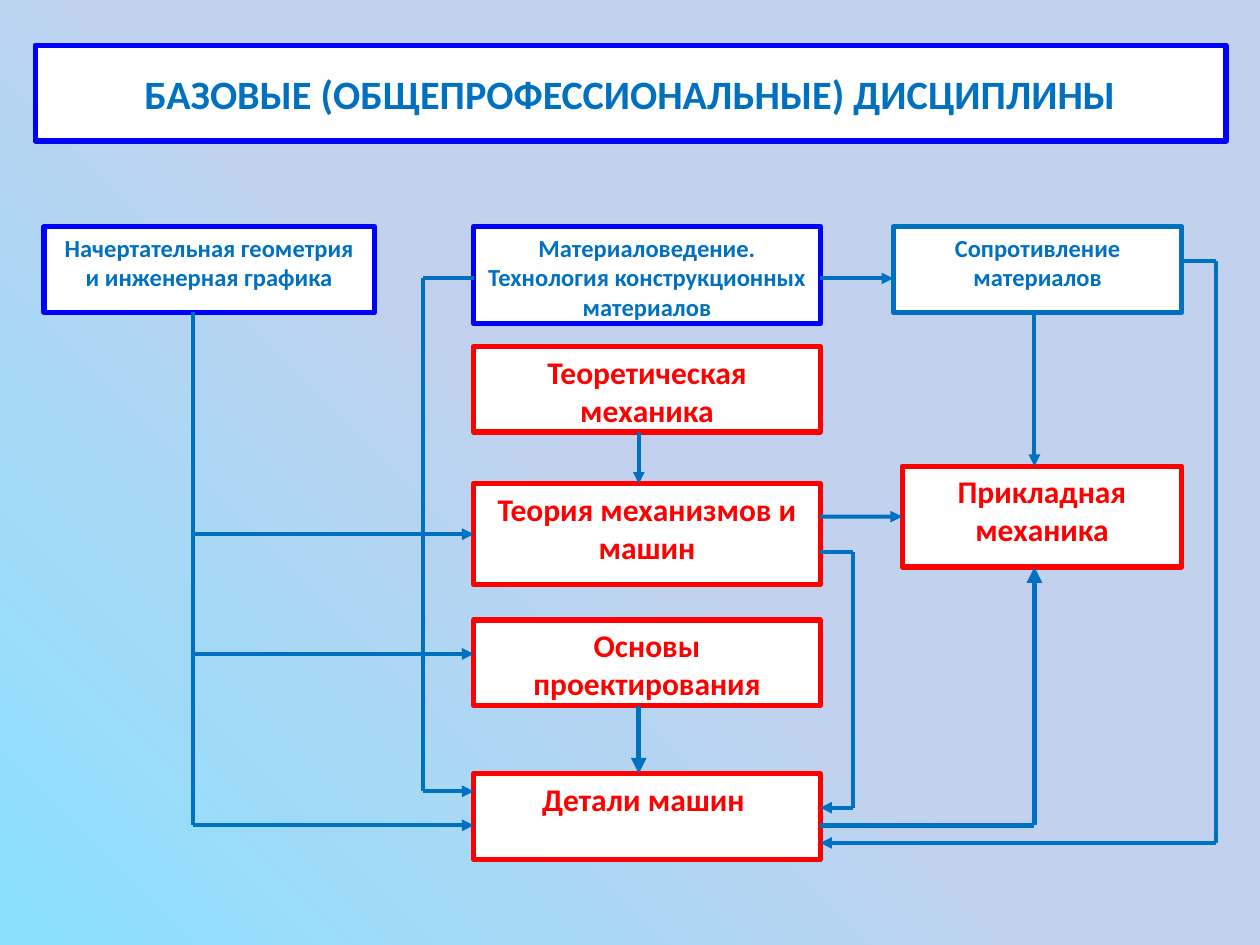
from itertools import pairwise

from lxml import etree
from pptx import Presentation
from pptx.dml.color import RGBColor
from pptx.enum import shapes, text
from pptx.oxml import ns
from pptx.util import Inches, Pt

BLUE, SKY, RED, WHITE = "0000FF", "0070C0", "FF0000", "FFFFFF"
TOP, MIDDLE = text.MSO_ANCHOR.TOP, text.MSO_ANCHOR.MIDDLE
LEFT_SIDE = 1


def color(value):
    return RGBColor.from_string(value)


def paint_background(page):
    fill = page.background.fill
    fill.gradient()
    fill.gradient_angle = 225
    for stop, (position, value) in zip(fill.gradient_stops, [(0.5, "C2D1ED"), (1, "89E0FF")]):
        stop.position = position
        stop.color.rgb = color(value)


def add_box(page, bounds, wording, border, ink, size, anchor=TOP):
    box = page.shapes.add_shape(shapes.MSO_SHAPE.RECTANGLE, *map(Inches, bounds))
    box.shadow.inherit = False
    box.fill.solid()
    box.fill.fore_color.rgb = color(WHITE)
    box.line.color.rgb = color(border)
    box.line.width = Pt(3)
    frame = box.text_frame
    frame.text = wording
    frame.word_wrap = True
    frame.vertical_anchor = anchor
    para = frame.paragraphs[0]
    para.alignment = text.PP_ALIGN.CENTER
    font = para.runs[0].font
    font.name, font.size, font.bold = "Calibri", Pt(size), True
    font.color.rgb = color(ink)
    return box


def add_route(page, points, width=2.25, arrow=True, target=None):
    for start, end in pairwise(points):
        line = page.shapes.add_connector(
            shapes.MSO_CONNECTOR.STRAIGHT, *map(Inches, start + end))
        line.line.color.rgb = color(SKY)
        line.line.width = Pt(width)
        properties = line._element.spPr
        etree.SubElement(properties, ns.qn("a:effectLst"))
        if arrow and end == points[-1]:
            etree.SubElement(line.line._get_or_add_ln(), ns.qn("a:tailEnd"), type="triangle")
            if target is not None:
                line.end_connect(target, LEFT_SIDE)


def add_disciplines(page, left, top):
    right = left + 6.62
    center, center_width = left + 3.41, 2.75
    add_box(page, (left, top, 2.62, 0.68),
            "Начертательная геометрия и инженерная графика", BLUE, SKY, 14)
    add_box(page, (center, top, center_width, 0.77),
            "Материаловедение. Технология конструкционных материалов", BLUE, SKY, 14)
    add_box(page, (right + 0.12, top, 2.29, 0.68),
            "Сопротивление материалов", SKY, SKY, 14)

    column = [
        (0.95, 0.68, "Теоретическая механика"),
        (2.04, 0.8, "Теория механизмов и машин"),
        (3.12, 0.68, "Основы проектирования"),
        (4.34, 0.68, "Детали машин "),
    ]
    _, mechanisms, _, _ = [
        add_box(page, (center, top + offset, center_width, height), wording, RED, RED, 18)
        for offset, height, wording in column]
    applied = add_box(page, (right + 0.19, top + 1.9, 2.22, 0.8),
                      "Прикладная механика", RED, RED, 18)
    return mechanisms, applied


def add_links(page, mechanisms, applied):
    trunk, center_left, center_right = 1.53, 3.76, 6.51
    add_route(page, [(trunk, 2.48), (trunk, 6.55), (center_left, 6.55)])
    add_route(page, [(trunk, 4.24), (center_left, 4.24)], target=mechanisms)
    add_route(page, [(trunk, 5.19), (center_left, 5.19)])
    add_route(page, [(center_left, 2.21), (3.36, 2.21), (3.36, 6.28), (center_left, 6.28)])
    add_route(page, [(5.07, 3.43), (5.07, 3.84)])
    add_route(page, [(5.07, 5.6), (5.07, 6.14)], width=3)
    add_route(page, [(center_right, 2.21), (7.09, 2.21)])
    add_route(page, [(center_right, 4.1), (7.16, 4.1)], target=applied)
    add_route(page, [(8.21, 2.48), (8.21, 3.7)])
    add_route(page, [(center_right, 6.55), (8.21, 6.55), (8.21, 4.5)], width=3)
    add_route(page, [(center_right, 4.38), (6.77, 4.38), (6.77, 6.41), (center_right, 6.41)])
    add_route(page, [(9.38, 2.07), (9.65, 2.07), (9.65, 6.69), (center_right, 6.69)])


def main():
    deck = Presentation()
    deck.slide_width, deck.slide_height = Inches(10), Inches(7.5)
    page = deck.slides.add_slide(deck.slide_layouts[6])
    paint_background(page)
    add_box(page, (0.28, 0.36, 9.45, 0.76),
            "БАЗОВЫЕ (ОБЩЕПРОФЕССИОНАЛЬНЫЕ) ДИСЦИПЛИНЫ", BLUE, SKY, 23, MIDDLE)
    mechanisms, applied = add_disciplines(page, 0.35, 1.8)
    add_links(page, mechanisms, applied)
    deck.save("out.pptx")


if __name__ == "__main__":
    main()
